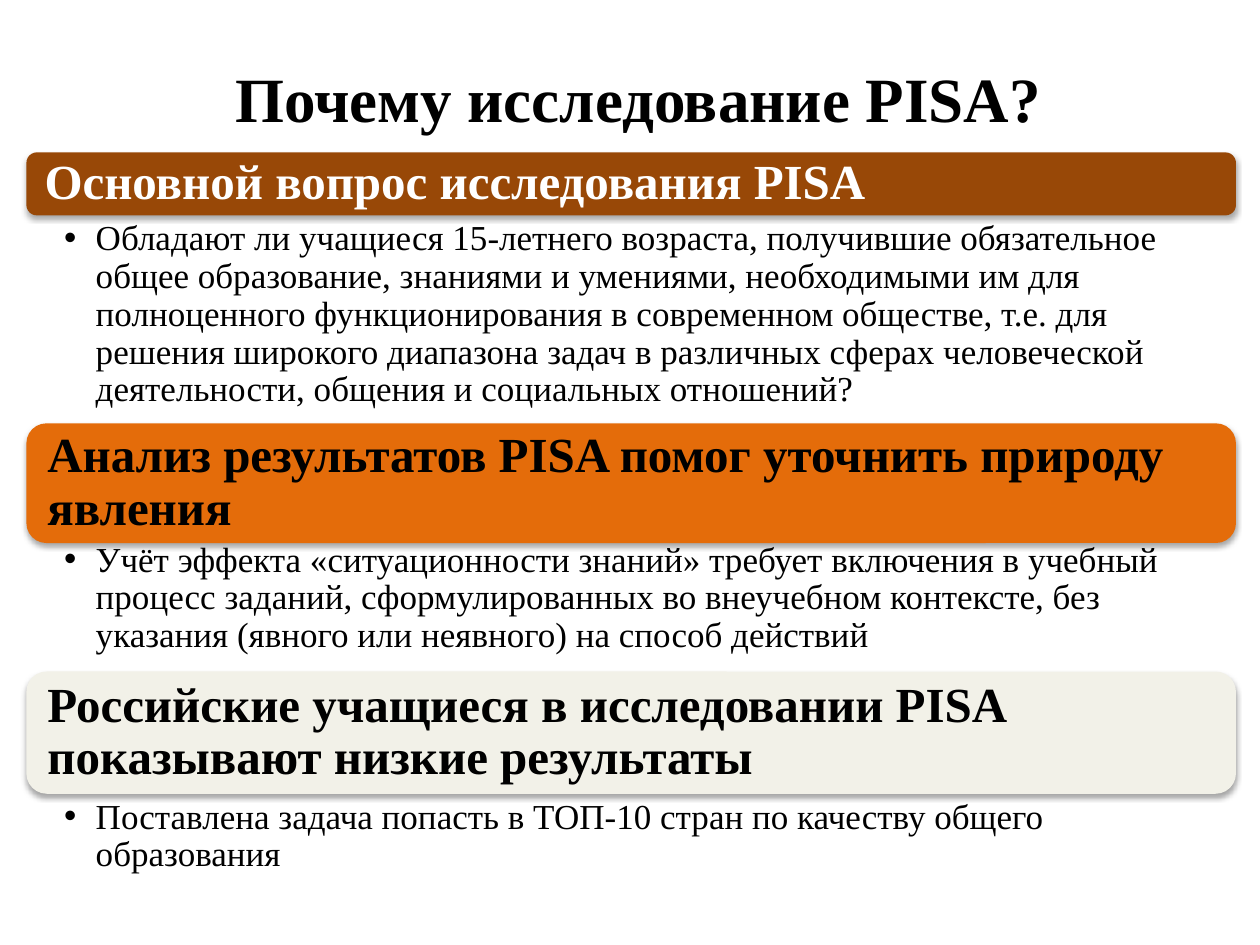
from dataclasses import dataclass

from lxml.etree import SubElement
from pptx import Presentation
from pptx.dml.color import RGBColor
from pptx.enum.shapes import MSO_SHAPE as Preset
from pptx.enum.text import MSO_ANCHOR as Anchor, MSO_AUTO_SIZE as AutoSize, PP_ALIGN as Align
from pptx.oxml.ns import qn
from pptx.util import Inches, Pt

COLORS = {
    "brown": "984807",
    "orange": "E46C0A",
    "ivory": "F2F1E8",
    "black": "000000",
    "white": "FFFFFF",
}
FONT = "Times New Roman"
WIDTH, HEIGHT = Inches(10), Inches(7.5)
COLUMNS, ROWS = 100, 75
LEFT, SPAN = 2.1, 96
COMPARISON_LAYOUT = 4


@dataclass
class Section:
    heading: str
    detail: str
    fill: str
    ink: str
    bar_row: float
    bar_rows: float
    list_row: float
    list_rows: float


SECTIONS = [
    Section(
        "Основной вопрос исследования PISA",
        "Обладают ли учащиеся 15-летнего возраста, получившие обязательное общее "
        "образование, знаниями и умениями, необходимыми им для полноценного "
        "функционирования в современном обществе, т.е. для решения широкого диапазона "
        "задач в различных сферах человеческой деятельности, общения и социальных отношений?",
        "brown", "white", 12.1, 5, 17.2, 15.2,
    ),
    Section(
        "Анализ результатов PISA помог уточнить природу явления",
        "Учёт эффекта «ситуационности знаний» требует включения в учебный процесс "
        "заданий, сформулированных во внеучебном контексте, без указания (явного или "
        "неявного) на способ действий",
        "orange", "black", 33.6, 9.5, 42.7, 11.6,
    ),
    Section(
        "Российские учащиеся в исследовании PISA показывают низкие результаты",
        "Поставлена задача попасть в ТОП-10 стран по качеству общего образования",
        "ivory", "black", 53.3, 9.7, 63.1, 7.6,
    ),
]


def across(columns: float) -> int:
    return round(WIDTH * columns / COLUMNS)


def down(rows: float) -> int:
    return round(HEIGHT * rows / ROWS)


def place(shape, left: float, top: float, width: float, height: float) -> None:
    shape.left, shape.top = across(left), down(top)
    shape.width, shape.height = across(width), down(height)


def write(shape, text: str, size: int, ink: str, bold: bool, align: Align, anchor: Anchor,
          insets: tuple[float, float, float, float], spacing: float):
    frame = shape.text_frame
    frame.word_wrap = True
    frame.auto_size = AutoSize.NONE
    frame.vertical_anchor = anchor
    left, top, right, bottom = insets
    frame.margin_left, frame.margin_right = across(left), across(right)
    frame.margin_top, frame.margin_bottom = down(top), down(bottom)
    paragraph = frame.paragraphs[0]
    paragraph.alignment = align
    paragraph.line_spacing = spacing
    paragraph.space_before = Pt(0)
    run = paragraph.add_run()
    run.text = text
    run.font.name, run.font.size, run.font.bold = FONT, Pt(size), bold
    run.font.color.rgb = RGBColor.from_string(COLORS[ink])
    return paragraph


def add_soft_shadow(shape) -> None:
    shape.shadow.inherit = False
    effects = shape._element.spPr.find(qn("a:effectLst"))
    shadow = SubElement(effects, qn("a:outerShdw"), blurRad=str(Pt(3.1)), dist=str(Pt(1.8)),
                        dir="5400000", rotWithShape="0")
    color = SubElement(shadow, qn("a:srgbClr"), val=COLORS["black"])
    SubElement(color, qn("a:alpha"), val="35000")


def add_bullet(paragraph) -> None:
    properties = paragraph._p.get_or_add_pPr()
    properties.set("marL", str(across(2.5)))
    properties.set("indent", str(across(-2.5)))
    SubElement(properties, qn("a:buFont"), typeface="Arial")
    SubElement(properties, qn("a:buChar"), char="•")


def draw_heading(slide, section: Section) -> None:
    bar = slide.shapes.add_shape(Preset.ROUNDED_RECTANGLE, across(LEFT), down(section.bar_row),
                                 across(SPAN), down(section.bar_rows))
    bar.fill.solid()
    bar.fill.fore_color.rgb = RGBColor.from_string(COLORS[section.fill])
    bar.line.fill.background()
    add_soft_shadow(bar)
    write(bar, section.heading, 28, section.ink, True, Align.LEFT, Anchor.MIDDLE,
          (1.2, 0, 1.2, 0), 0.9)


def draw_list(slide, placeholder, section: Section) -> None:
    place(placeholder, LEFT, section.list_row, SPAN, section.list_rows)
    paragraph = write(placeholder, section.detail, 20, "black", False, Align.LEFT, Anchor.TOP,
                      (3, 0.3, 1.6, 0.3), 0.9)
    add_bullet(paragraph)
    slide.shapes._spTree.append(placeholder._element)


def main() -> None:
    presentation = Presentation()
    presentation.slide_width, presentation.slide_height = WIDTH, HEIGHT
    slide = presentation.slides.add_slide(presentation.slide_layouts[COMPARISON_LAYOUT])
    title, *bodies, spare = list(slide.placeholders)
    spare._element.getparent().remove(spare._element)

    for section, body in zip(SECTIONS, bodies):
        draw_heading(slide, section)
        draw_list(slide, body, section)

    place(title, 5.8, 4.3, 89.7, 13.6)
    write(title, "Почему исследование PISA?", 36, "black", True, Align.CENTER, Anchor.TOP,
          (0.8, 0.4, 0.8, 0.4), 1.0)
    presentation.save("out.pptx")


if __name__ == "__main__":
    main()
